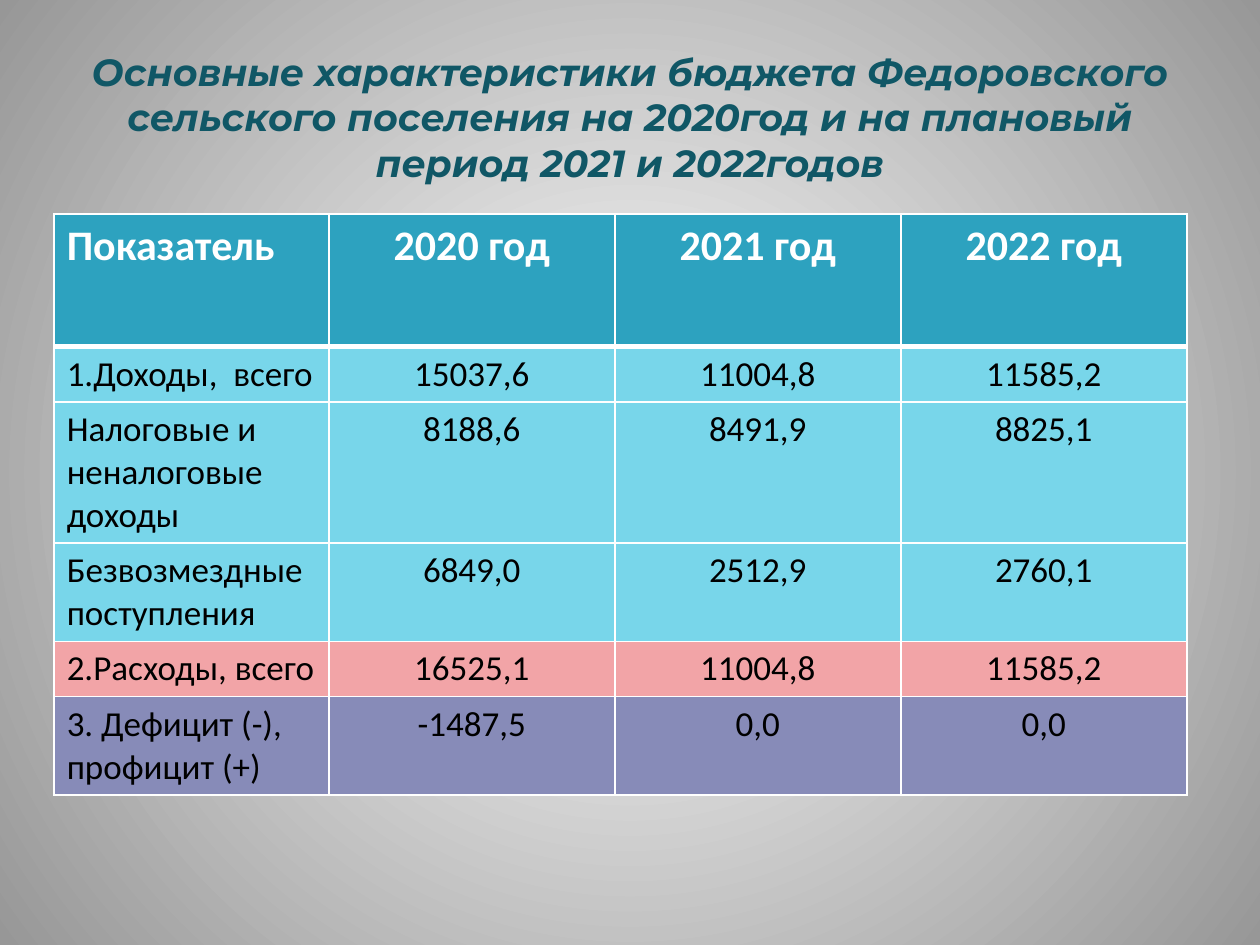
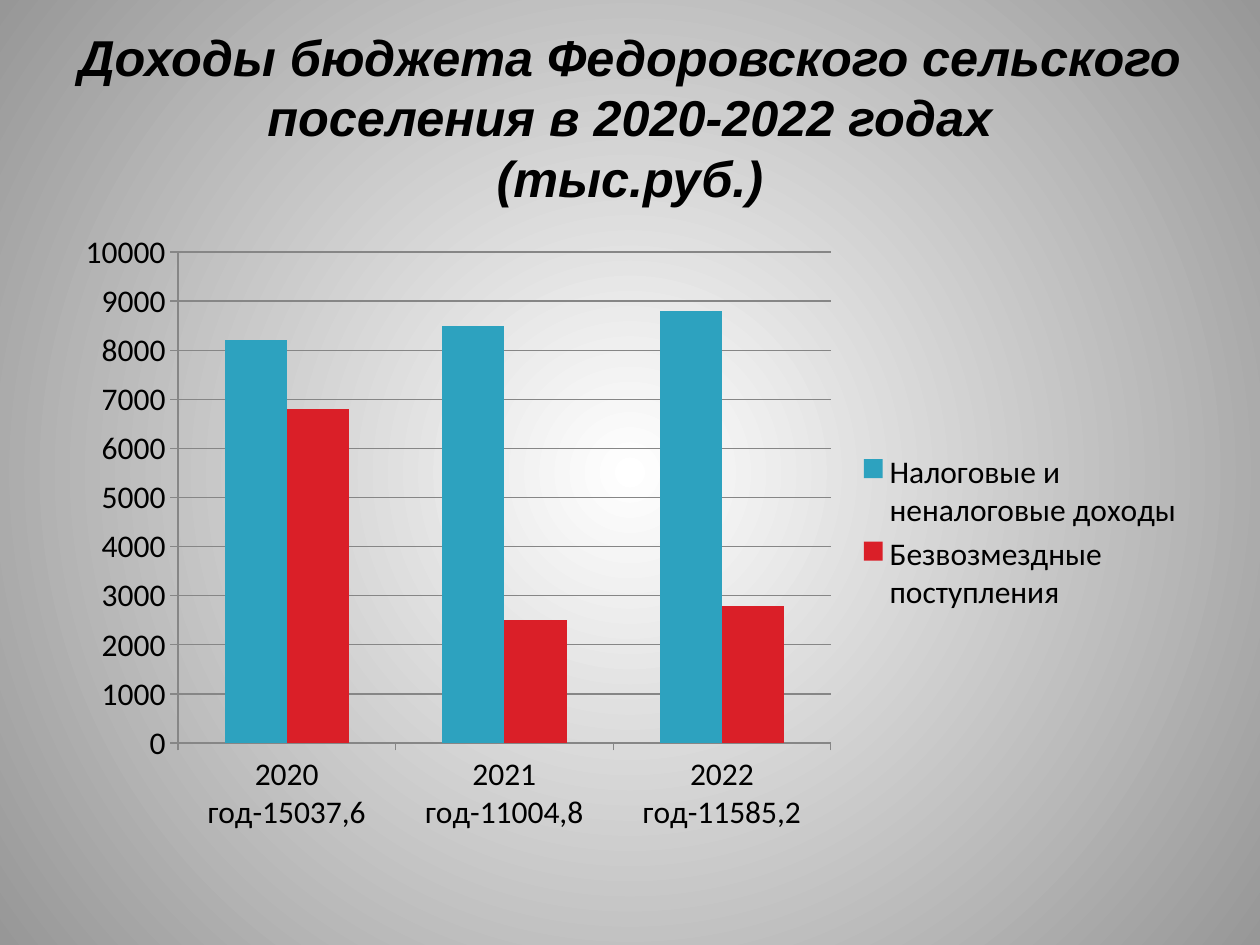
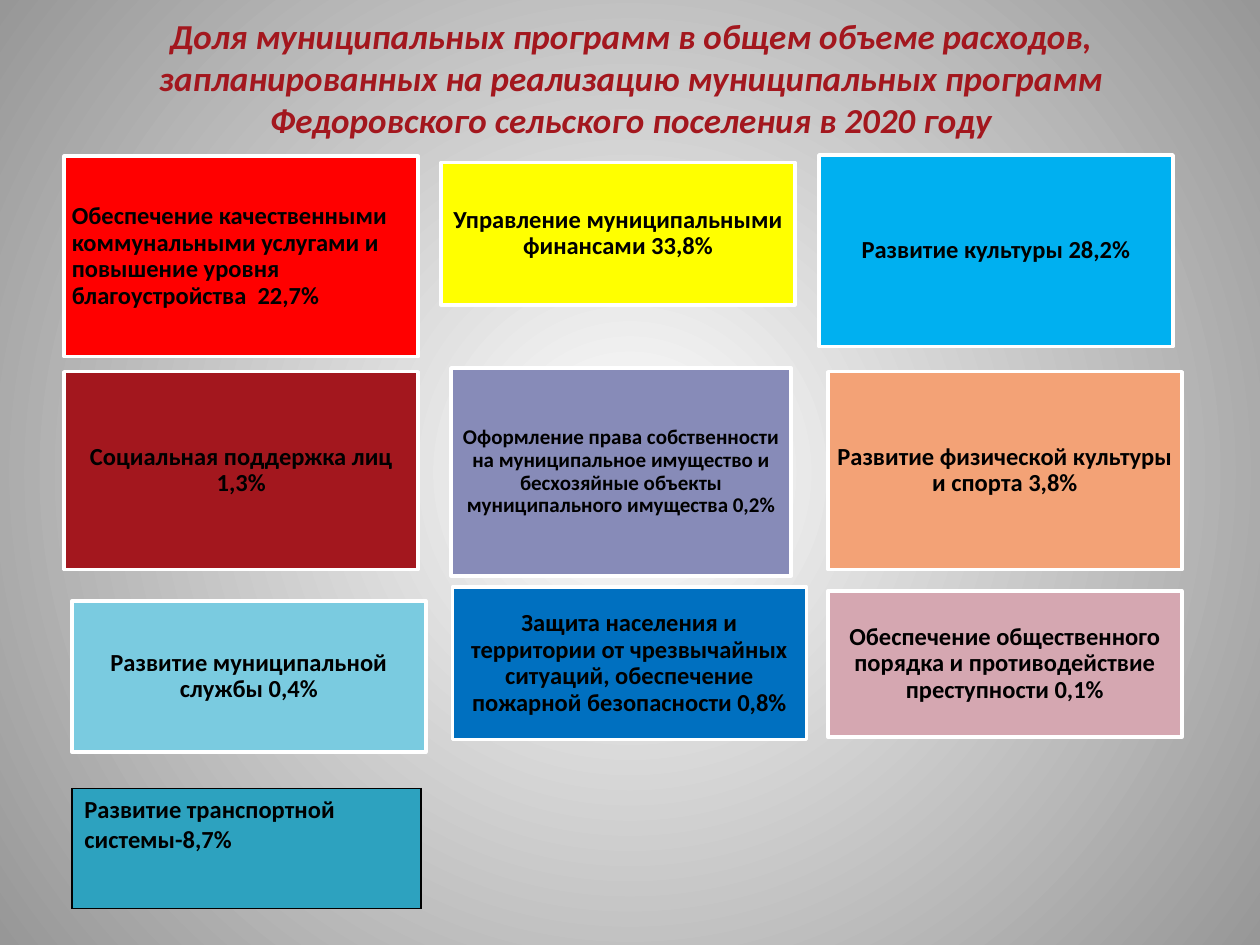
from lxml import etree
from pptx import Presentation
from pptx import util as u
from pptx.chart.data import CategoryChartData
from pptx.dml.color import RGBColor
from pptx.enum import chart as ch, shapes, text
from pptx.oxml.ns import qn

BLACK = RGBColor(0, 0, 0)
WHITE = RGBColor(0xFF, 0xFF, 0xFF)
EDGE_GREY = RGBColor(0x97, 0x97, 0x97)
LINE_GREY = RGBColor(0x86, 0x86, 0x86)
DARK_TEAL = RGBColor(0x10, 0x57, 0x66)
TEAL = RGBColor(0x2D, 0xA2, 0xBF)
AQUA = RGBColor(0x78, 0xD6, 0xEA)
PALE_BLUE = RGBColor(0x7A, 0xCB, 0xE0)
SKY = RGBColor(0x00, 0xB0, 0xF0)
BLUE = RGBColor(0x00, 0x70, 0xC0)
LAVENDER = RGBColor(0x87, 0x8B, 0xB8)
PINK = RGBColor(0xF2, 0xA4, 0xA7)
ROSE = RGBColor(0xD5, 0xA7, 0xB1)
PEACH = RGBColor(0xF3, 0xA2, 0x76)
YELLOW = RGBColor(0xFF, 0xFF, 0x00)
RED = RGBColor(0xFF, 0x00, 0x00)
CRIMSON = RGBColor(0xDA, 0x1F, 0x28)
DARK_RED = RGBColor(0xA3, 0x17, 0x1E)

FONT = "Calibri"
COLS, ROWS = 20, 15
LEFT, CENTER = text.PP_ALIGN.LEFT, text.PP_ALIGN.CENTER
MIDDLE = text.MSO_ANCHOR.MIDDLE


class Deck:
    """Slides on a grid of 20 columns by 15 rows."""

    def __init__(self):
        self.prs = Presentation()
        self.prs.slide_width, self.prs.slide_height = u.Inches(10), u.Inches(7.5)
        self.col = self.prs.slide_width / COLS
        self.row = self.prs.slide_height / ROWS
        self.s = None
        self.background()

    def background(self):
        """Give the master a circular gradient, light in the middle."""
        master = self.prs.slide_master
        fill = master.background.fill
        fill.gradient()
        for stop, place, color in zip(fill.gradient_stops, (0, 1), (WHITE, EDGE_GREY)):
            stop.position, stop.color.rgb = place, color
        grad = master.element.find(".//" + qn("a:gradFill"))
        grad.remove(grad.find(qn("a:lin")))
        circle = etree.SubElement(grad, qn("a:path"), {"path": "circle"})
        etree.SubElement(circle, qn("a:fillToRect"), dict.fromkeys("ltrb", "50000"))

    def new_slide(self):
        self.s = self.prs.slides.add_slide(self.prs.slide_layouts[6])

    def box(self, x, y, w, h):
        """Turn grid columns and rows into lengths."""
        return [u.Emu(round(n)) for n in
                (x * self.col, y * self.row, w * self.col, h * self.row)]

    def set_text(self, tf, words, size, color=BLACK, font=FONT, align=CENTER,
                 bold=True, italic=False):
        tf.word_wrap = True
        p = tf.paragraphs[0]
        p.text, p.alignment = words, align
        for r in p.runs:
            f = r.font
            f.name, f.size, f.bold, f.italic = font, u.Pt(size), bold, italic
            f.color.rgb = color
        return p

    def title(self, words, size, color, font=FONT, at=(1, 0.6, 18, 2.5)):
        tf = self.s.shapes.add_textbox(*self.box(*at)).text_frame
        tf.vertical_anchor = MIDDLE
        self.set_text(tf, words, size, color, font, italic=True)

    def card(self, at, fill, words, size=14, align=CENTER):
        sp = self.s.shapes.add_shape(shapes.MSO_SHAPE.RECTANGLE, *self.box(*at))
        sp.shadow.inherit = False
        sp.fill.solid()
        sp.fill.fore_color.rgb = fill
        sp.line.color.rgb, sp.line.width = WHITE, u.Pt(2)
        tf = sp.text_frame
        tf.vertical_anchor = MIDDLE
        tf.margin_left = tf.margin_right = tf.margin_top = tf.margin_bottom = u.Inches(0.06)
        self.set_text(tf, words, size, align=align).line_spacing = 0.9

    def border(self, cell, color, widths):
        """Draw the left, right, top and bottom borders, widths in points."""
        tc_pr = cell._tc.get_or_add_tcPr()
        for side, width in zip("LRTB", widths):
            ln = etree.SubElement(tc_pr, qn(f"a:ln{side}"), {"w": str(u.Pt(width))})
            fill = etree.SubElement(ln, qn("a:solidFill"))
            etree.SubElement(fill, qn("a:srgbClr"), {"val": str(color)})

    def table(self, x, y, widths, rows, size, line, header=False, bold=False):
        """Each row is its height, its fill and its texts."""
        heights = [height for height, _, _ in rows]
        at = self.box(x, y, sum(widths), sum(heights))
        tbl = self.s.shapes.add_table(len(rows), len(widths), *at).table
        tbl.first_row = tbl.horz_banding = False
        for column, width in zip(tbl.columns, widths):
            column.width = u.Emu(round(width * self.col))
        for i, (height, fill, texts) in enumerate(rows):
            tbl.rows[i].height = u.Emu(round(height * self.row))
            head = header and i == 0
            top, bottom = (3 if header and i == 1 else 1), (3 if head else 1)
            for j, words in enumerate(texts):
                cell = tbl.cell(i, j)
                self.border(cell, line, (1, 1, top, bottom))
                cell.fill.solid()
                cell.fill.fore_color.rgb = fill
                self.set_text(cell.text_frame, words, 24 if head else size,
                              WHITE if head else BLACK, align=CENTER if j else LEFT,
                              bold=bold or head)

    def column_chart(self, at, categories, series, top, step):
        """Each series is its name, its colour and its values."""
        data = CategoryChartData(number_format="General")
        data.categories = categories
        for name, _, values in series:
            data.add_series(name, values)
        chart = self.s.shapes.add_chart(
            ch.XL_CHART_TYPE.COLUMN_CLUSTERED, *self.box(*at), data).chart
        chart.font.name, chart.font.size = FONT, u.Pt(18)
        chart.font.color.rgb = BLACK
        chart.has_title = False
        chart.has_legend = True
        chart.legend.position = ch.XL_LEGEND_POSITION.RIGHT
        chart.legend.include_in_layout = False
        plot = chart.plots[0]
        plot.gap_width, plot.vary_by_categories = 150, False
        for ser, (_, color, _) in zip(plot.series, series):
            ser.format.fill.solid()
            ser.format.fill.fore_color.rgb = color
        axis = chart.value_axis
        axis.minimum_scale, axis.maximum_scale, axis.major_unit = 0, top, step
        axis.has_major_gridlines = True
        for lined in (axis, chart.category_axis, axis.major_gridlines):
            lined.format.line.color.rgb = LINE_GREY
            lined.format.line.width = u.Pt(0.75)


def budget_table(deck):
    deck.new_slide()
    deck.title("Основные характеристики бюджета Федоровского сельского поселения "
               "на 2020год и на плановый период 2021 и 2022годов",
               21.6, DARK_TEAL, "Montserrat")
    one, two, three = (0.2 + 0.68 * lines for lines in (1, 2, 3))
    deck.table(0.86, 3.4, [4.36] + [4.54] * 3, [
        (2.1, TEAL, ["Показатель", "2020 год", "2021 год", "2022 год"]),
        (one, AQUA, ["1.Доходы,  всего", "15037,6", "11004,8", "11585,2"]),
        (three, AQUA, ["Налоговые и неналоговые доходы", "8188,6", "8491,9", "8825,1"]),
        (two, AQUA, ["Безвозмездные поступления", "6849,0", "2512,9", "2760,1"]),
        (one, PINK, ["2.Расходы, всего", "16525,1", "11004,8", "11585,2"]),
        (two, LAVENDER, ["3. Дефицит (-), профицит (+)", "-1487,5", "0,0", "0,0"]),
    ], 20, WHITE, header=True)


def income_chart(deck):
    deck.new_slide()
    deck.title("Доходы бюджета Федоровского сельского поселения "
               "в 2020-2022 годах\v(тыс.руб.)", 28.8, BLACK, "Arial")
    deck.column_chart(
        (1, 3.5, 18, 9.9),
        ["2020 год-15037,6", "2021 год-11004,8", "2022 год-11585,2"],
        [("Налоговые и неналоговые доходы", TEAL, (8200, 8500, 8800)),
         ("Безвозмездные поступления", CRIMSON, (6800, 2500, 2800))],
        top=10000, step=1000)


def programme_shares(deck):
    deck.new_slide()
    deck.title("Доля муниципальных программ в общем объеме расходов, запланированных "
               "на реализацию муниципальных программ Федоровского сельского поселения "
               "в 2020 году", 20, DARK_RED, at=(1.02, 0, 18, 2.46))
    wide = 5.62
    deck.card((1.02, 2.48, wide, 3.18), RED,
              "Обеспечение качественными коммунальными услугами и повышение уровня "
              "благоустройства  22,7%", align=LEFT)
    deck.card((7.16, 5.84, 5.4, 3.3), LAVENDER,
              "Оформление права собственности на муниципальное имущество и бесхозяйные "
              "объекты муниципального имущества 0,2%", size=12)
    for x, y, h, fill, words in (
            (7, 2.58, 2.26, YELLOW, "Управление муниципальными финансами 33,8%"),
            (13, 2.46, 3.04, SKY, "Развитие культуры 28,2%"),
            (1.02, 5.9, 3.14, DARK_RED, "Социальная поддержка лиц 1,3%"),
            (13.14, 5.9, 3.14, PEACH, "Развитие физической культуры и спорта 3,8%"),
            (1.14, 9.54, 2.4, PALE_BLUE, "Развитие муниципальной службы 0,4%"),
            (7.18, 9.32, 2.42, BLUE, "Защита населения и территории от чрезвычайных "
                                     "ситуаций, обеспечение пожарной безопасности 0,8%"),
            (13.14, 9.38, 2.32, ROSE, "Обеспечение общественного порядка и "
                                      "противодействие преступности 0,1%")):
        deck.card((x, y, wide, h), fill, words)
    deck.table(1.14, 12.52, [5.54],
               [(1.9, TEAL, ["Развитие транспортной системы-8,7%"])],
               14, BLACK, bold=True)


def main():
    deck = Deck()
    budget_table(deck)
    income_chart(deck)
    programme_shares(deck)
    deck.prs.save("out.pptx")


if __name__ == "__main__":
    main()
